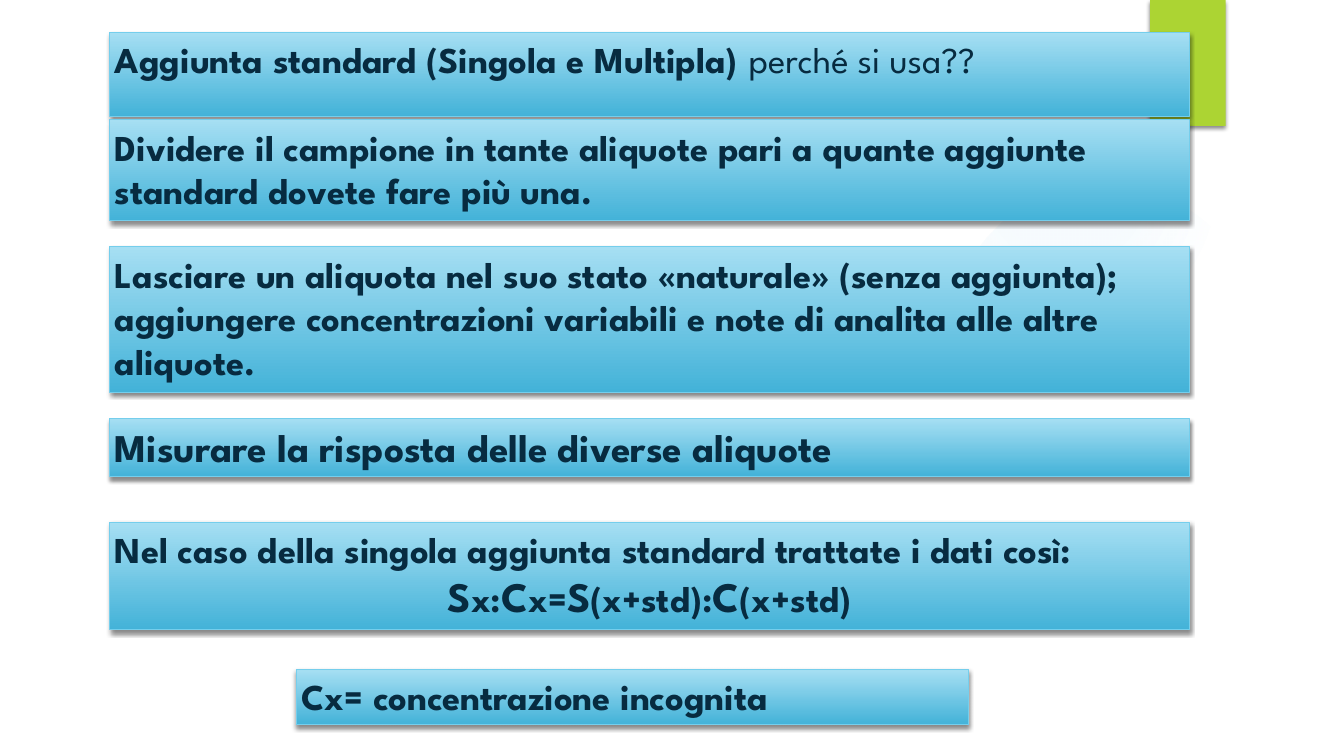
from dataclasses import dataclass

import lxml.etree
import pptx
import pptx.dml.color
import pptx.enum.shapes
import pptx.enum.text
import pptx.oxml
import pptx.oxml.ns
import pptx.util
from pptx.shapes.autoshape import Shape
from pptx.text.text import TextFrame

Pt = pptx.util.Pt
RGB = pptx.dml.color.RGBColor
ALIGN = pptx.enum.text.PP_ALIGN
SHAPE = pptx.enum.shapes.MSO_SHAPE


@dataclass(frozen=True)
class Theme:
    font: str = "League Spartan"
    body: int = 26
    step: int = 28
    symbol: int = 30
    ink: str = "072B40"
    box_top: str = "A6DFF3"
    box_bottom: str = "43B2D8"
    box_line: str = "75CEEC"
    tab: str = "ACD433"
    glow: str = "7AC4F0"
    shadow: str = "000000"


THEME = Theme()


@dataclass(frozen=True)
class Run:
    text: str
    size: int = THEME.body
    bold: bool = True


@dataclass(frozen=True)
class Para:
    runs: tuple[Run, ...]
    align: ALIGN = ALIGN.LEFT


@dataclass(frozen=True)
class Box:
    top: float
    height: float
    paras: tuple[Para, ...]
    left: float = 78.5
    width: float = 771.1


def line(text: str, size: int = THEME.body) -> tuple[Para, ...]:
    return (Para((Run(text, size),)),)


FORMULA = Para(
    tuple(Run(t, THEME.symbol if t in ("S", "C") else THEME.body)
          for t in ("S", "x:", "C", "x=", "S", "(x+std):", "C", "(x+std)")),
    ALIGN.CENTER,
)
HEADING = Box(23, 39.6, (Para((
    Run("Aggiunta standard (Singola e Multipla) "),
    Run("perché si usa??", bold=False))),))
STEPS = (
    Box(85.7, 72, line("Dividere il campione in tante aliquote pari a quante "
                       "aggiunte standard dovete fare più una.")),
    Box(176.4, 103.7, line(
        "Lasciare un aliquota nel suo stato «naturale» (senza aggiunta); "
        "aggiungere concentrazioni variabili e note di analita alle altre aliquote.")),
    Box(298.8, 41.8, line("Misurare la risposta delle diverse aliquote", THEME.step)),
    Box(373, 77, line("Nel caso della singola aggiunta standard trattate "
                      "i dati così:") + (FORMULA,)),
    Box(478.1, 39.6, line("Cx= concentrazione incognita"), left=211.7, width=480.2),
)


def add_shadow(sp: Shape) -> None:
    sp.shadow.inherit = False
    effects = sp.element.spPr.find(pptx.oxml.ns.qn("a:effectLst"))
    effects.append(pptx.oxml.parse_xml(
        f'<a:outerShdw {pptx.oxml.ns.nsdecls("a")} blurRad="{Pt(3)}" dist="{Pt(2)}" '
        f'dir="5400000" rotWithShape="0"><a:srgbClr val="{THEME.shadow}">'
        '<a:alpha val="45000"/></a:srgbClr></a:outerShdw>'))


def fill_glow(sp: Shape) -> None:
    stops = "".join(
        f'<a:gs pos="{pos}000"><a:srgbClr val="{THEME.glow}">'
        f'<a:alpha val="{alpha}000"/></a:srgbClr></a:gs>'
        for pos, alpha in ((0, 7), (36, 6), (69, 0), (100, 0)))
    grad = pptx.oxml.parse_xml(
        f'<a:gradFill {pptx.oxml.ns.nsdecls("a")}><a:gsLst>{stops}</a:gsLst>'
        '<a:path path="circle"><a:fillToRect l="38000" t="-20000" r="62000" '
        'b="120000"/></a:path></a:gradFill>')
    sp.element.spPr.find(pptx.oxml.ns.qn("a:prstGeom")).addnext(grad)


def write(tf: TextFrame, paras: tuple[Para, ...]) -> None:
    tf.word_wrap = True
    tf.auto_size = pptx.enum.text.MSO_AUTO_SIZE.SHAPE_TO_FIT_TEXT
    tf.vertical_anchor = pptx.enum.text.MSO_ANCHOR.TOP
    tf.margin_left = tf.margin_right = tf.margin_top = tf.margin_bottom = Pt(3.6)
    for i, para in enumerate(paras):
        p = tf.add_paragraph() if i else tf.paragraphs[0]
        p.alignment = para.align
        for run in para.runs:
            r = p.add_run()
            r.text = run.text
            r.font.name = THEME.font
            r.font.size = Pt(run.size)
            r.font.bold = run.bold
            r.font.color.rgb = RGB.from_string(THEME.ink)


def style_box(sp: Shape, box: Box) -> None:
    sp.left, sp.top = Pt(box.left), Pt(box.top)
    sp.width, sp.height = Pt(box.width), Pt(box.height)
    sp.fill.gradient()
    sp.fill.gradient_angle = 270
    for stop, colour in zip(sp.fill.gradient_stops, (THEME.box_top, THEME.box_bottom)):
        stop.color.rgb = RGB.from_string(colour)
    sp.line.color.rgb = RGB.from_string(THEME.box_line)
    sp.line.width = Pt(0.75)
    add_shadow(sp)
    write(sp.text_frame, box.paras)


def main() -> None:
    prs = pptx.Presentation()
    prs.slide_width, prs.slide_height = Pt(960), Pt(540)
    s = prs.slides.add_slide(prs.slide_layouts[5])
    title = s.shapes.title

    # Background glow and green tab, placed behind the title
    glow = s.shapes.add_shape(SHAPE.OVAL, Pt(677.5), Pt(131.8), Pt(221.8), Pt(221.8))
    fill_glow(glow)
    glow.line.fill.background()
    glow.shadow.inherit = False
    tab = s.shapes.add_shape(SHAPE.RECTANGLE, Pt(821.5), 0, Pt(54), Pt(90))
    tab.fill.solid()
    tab.fill.fore_color.rgb = RGB.from_string(THEME.tab)
    tab.line.fill.background()
    add_shadow(tab)
    for sp in (glow, tab):
        title.element.addprevious(sp.element)

    # Heading and steps
    style_box(title, HEADING)
    for box in STEPS:
        sp = s.shapes.add_shape(SHAPE.RECTANGLE, 0, 0, Pt(box.width), Pt(box.height))
        style_box(sp, box)

    prs.save("out.pptx")


if __name__ == "__main__":
    main()
